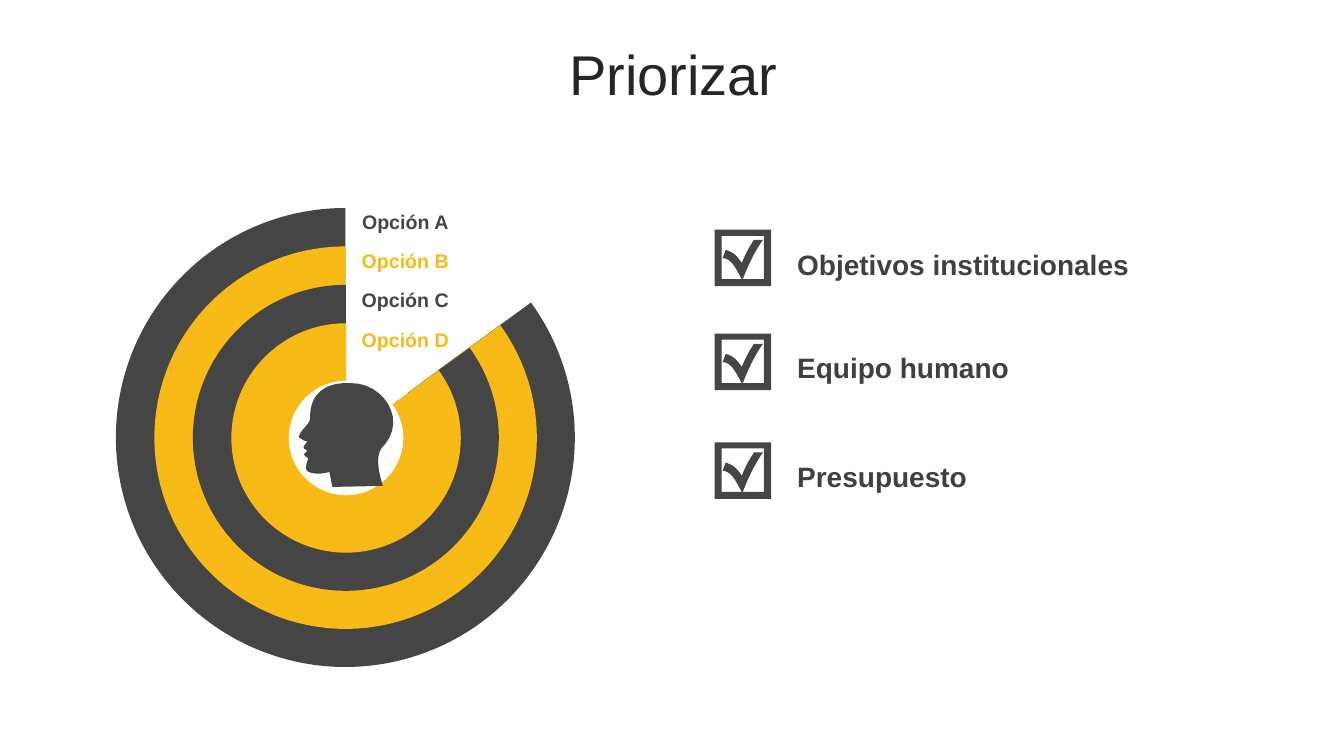
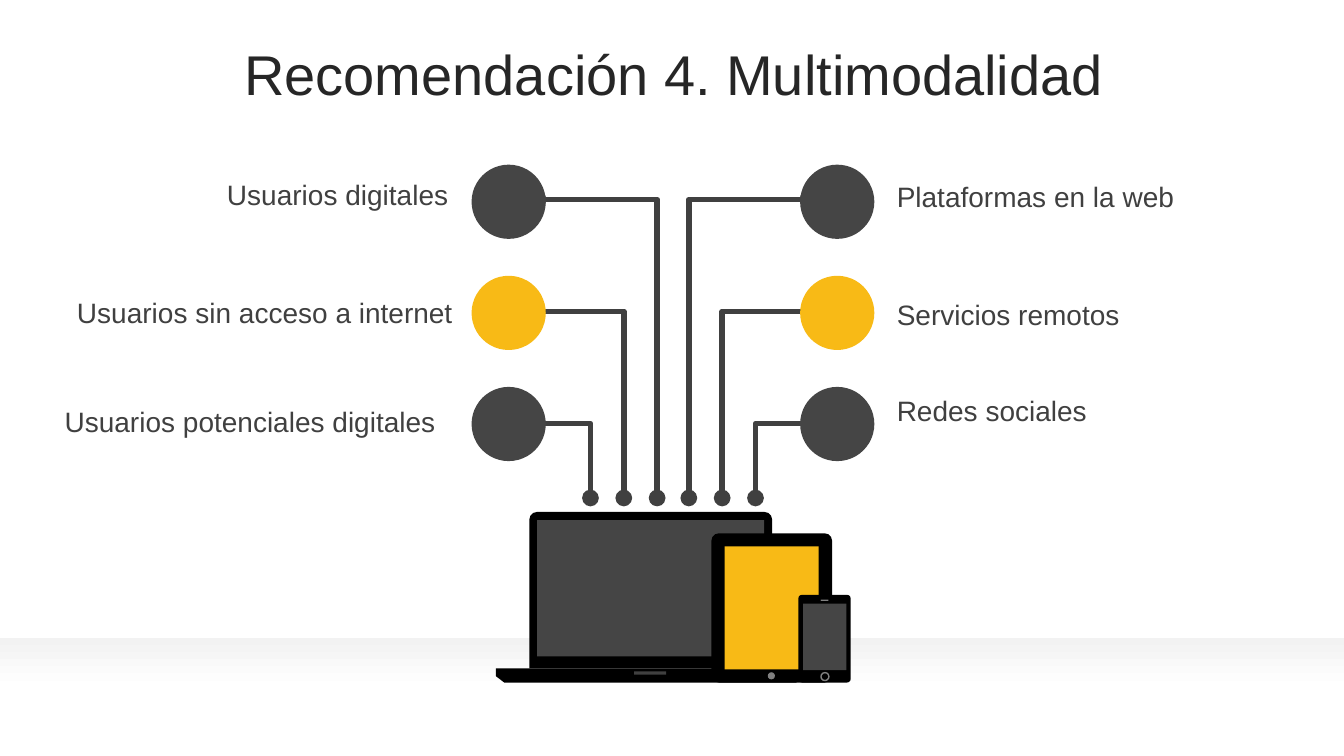
"""Builds two slides: priorities as nested rings and multimodal user channels."""
import lxml.etree
import pptx
import pptx.chart.data
import pptx.dml.color
import pptx.enum.chart
import pptx.enum.shapes
import pptx.enum.text
import pptx.oxml.ns
import pptx.util

Cm = pptx.util.Cm
Pt = pptx.util.Pt
qn = pptx.oxml.ns.qn
RGBColor = pptx.dml.color.RGBColor
Preset = pptx.enum.shapes.MSO_SHAPE
Align = pptx.enum.text.PP_ALIGN

TITLE_INK = RGBColor(0x26, 0x26, 0x26)
INK = RGBColor(0x40, 0x40, 0x40)
CHARCOAL = RGBColor(0x45, 0x45, 0x45)
AMBER = RGBColor(0xF8, 0xBA, 0x16)
BLACK = RGBColor(0, 0, 0)
GREY = RGBColor(0x80, 0x80, 0x80)
PALE = RGBColor(0xF2, 0xF2, 0xF2)
WHITE = RGBColor(0xFF, 0xFF, 0xFF)

HEAD = [[
    (52, 1), (31, 0, 18, 7, 13, 21), (9, 33, 13, 37, 8, 42),
    (4, 47, -1, 52, 0, 55), (2, 56, 4, 58, 8, 59), (7, 61, 3, 64, 5, 66),
    (8, 68), (7, 70, 5, 70, 5, 72), (6, 74, 9, 75, 9, 76),
    (7, 81, 6, 86, 8, 88), (11, 91, 21, 92, 30, 89), (33, 104), (83, 103),
    (76, 80, 77, 69, 85, 62), (107, 35, 82, 1, 52, 1),
]]
CHECKED_BOX = [
    [(7, 6), (7, 49), (27, 49), (22, 41, 18, 29, 8, 28), (11, 20),
     (20, 23, 22, 26, 27, 33), (31, 23, 34, 18, 39, 10), (48, 10),
     (40, 21, 33, 36, 28, 49), (49, 49), (49, 6)],
    [(0, 0), (56, 0), (56, 56), (0, 56)],
]


def flatten(contour, steps=12):
    points = [contour[0]]
    for part in contour[1:]:
        if len(part) == 2:
            points.append(part)
            continue
        start, controls = points[-1], (part[0:2], part[2:4], part[4:6])
        for step in range(1, steps + 1):
            t = step / steps
            weights = ((1 - t) ** 3, 3 * t * (1 - t) ** 2, 3 * t * t * (1 - t), t ** 3)
            points.append(tuple(
                sum(w * p[axis] for w, p in zip(weights, (start, *controls)))
                for axis in (0, 1)))
    return points


class Deck:
    def __init__(self):
        self.show = pptx.Presentation()
        self.show.slide_width, self.show.slide_height = Cm(33.87), Cm(19.05)
        self.slide = None

    def new_slide(self, title):
        self.slide = self.show.slides.add_slide(self.show.slide_layouts[6])
        heading = self.text(title, 0.89, 0.94, 32.16, 2.01, 40, TITLE_INK, Align.CENTER)
        heading.vertical_anchor = pptx.enum.text.MSO_ANCHOR.MIDDLE
        heading.paragraphs[0].line_spacing = 0.9
        heading.paragraphs[0].space_before = Pt(10)

    def text(self, words, left, top, width, height, size=20, color=INK,
             align=Align.LEFT, bold=False):
        box = self.slide.shapes.add_textbox(Cm(left), Cm(top), Cm(width), Cm(height))
        frame = box.text_frame
        frame.word_wrap = True
        paragraph = frame.paragraphs[0]
        paragraph.text = words
        paragraph.alignment = align
        font = paragraph.font
        font.name, font.size, font.bold = "Arial", Pt(size), bold
        font.color.rgb = color
        return frame

    def shape(self, preset, left, top, width, height, fill=None, adjust=()):
        shape = self.slide.shapes.add_shape(preset, Cm(left), Cm(top), Cm(width), Cm(height))
        for index, value in enumerate(adjust):
            shape.adjustments[index] = value
        return self.finish(shape, fill)

    def finish(self, shape, fill):
        shape.shadow.inherit = False
        shape.line.fill.background()
        if fill is None:
            shape.fill.background()
        else:
            shape.fill.solid()
            shape.fill.fore_color.rgb = fill
        return shape

    def icon(self, contours, left, top, grid=2.54):
        outlines = [[(Cm(left + x * grid / 100), Cm(top + y * grid / 100))
                     for x, y in flatten(contour)] for contour in contours]
        builder = self.slide.shapes.build_freeform(*outlines[0][0])
        builder.add_line_segments(outlines[0][1:], close=True)
        for outline in outlines[1:]:
            builder.move_to(*outline[0])
            builder.add_line_segments(outline[1:], close=True)
        self.finish(builder.convert_to_shape(), CHARCOAL)

    def ring(self, center_x, center_y, size, hole, color):
        data = pptx.chart.data.CategoryChartData()
        data.categories = ["1", "2"]
        data.add_series("Series 1", (15, 85))
        chart = self.slide.shapes.add_chart(
            pptx.enum.chart.XL_CHART_TYPE.DOUGHNUT, Cm(center_x - size / 2),
            Cm(center_y - size / 2), Cm(size), Cm(size), data).chart
        chart.has_legend = chart.has_title = False
        chart.font.name, chart.font.size = "Arial", Pt(18)
        chart.font.color.rgb = BLACK
        plot = chart.plots[0]
        plot.vary_by_categories = False
        gap, band = (plot.series[0].points[index].format for index in (0, 1))
        gap.fill.background()
        band.fill.solid()
        band.fill.fore_color.rgb = color
        for part in (gap, band):
            part.line.fill.background()

        root = chart.element
        next(root.iter(qn("c:holeSize"))).set("val", str(hole))
        area = next(root.iter(qn("c:plotArea")))
        for old in area.findall(qn("c:layout")):
            area.remove(old)
        layout = lxml.etree.Element(qn("c:layout"))
        area.insert(0, layout)
        manual = lxml.etree.SubElement(layout, qn("c:manualLayout"))
        for tag, value in (("layoutTarget", "inner"), ("xMode", "edge"), ("yMode", "edge"),
                           ("x", "0.015"), ("y", "0.011"), ("w", "0.964"), ("h", "0.974")):
            lxml.etree.SubElement(manual, qn("c:" + tag)).set("val", value)
        backdrop = lxml.etree.Element(qn("c:spPr"))
        lxml.etree.SubElement(backdrop, qn("a:noFill"))
        border = lxml.etree.SubElement(backdrop, qn("a:ln"))
        lxml.etree.SubElement(border, qn("a:noFill"))
        root.find(qn("c:chart")).addnext(backdrop)

    def cable(self, plug_x, plug_y, node_x, node_y):
        side = 1 if node_x > plug_x else -1
        middle_x, middle_y = (plug_x + node_x) / 2, (plug_y + node_y) / 2
        reach = side * (plug_y - node_y) / 2
        spread = abs(node_x - plug_x) / 2
        cable = self.slide.shapes.add_connector(
            pptx.enum.shapes.MSO_CONNECTOR.ELBOW,
            Cm(middle_x + reach), Cm(middle_y + spread),
            Cm(middle_x - reach), Cm(middle_y - spread))
        cable.line.color.rgb = INK
        cable.line.width = Pt(4)
        properties = cable.element.spPr
        properties.find(qn("a:xfrm")).set("rot", "5400000" if side > 0 else "16200000")
        geometry = properties.find(qn("a:prstGeom"))
        guides = geometry.find(qn("a:avLst"))
        if guides is None:
            guides = lxml.etree.SubElement(geometry, qn("a:avLst"))
        bend = lxml.etree.SubElement(guides, qn("a:gd"))
        bend.set("name", "adj1")
        bend.set("fmla", "val 100000")
        stroke = properties.find(qn("a:ln"))
        for end in ("a:headEnd", "a:tailEnd"):
            lxml.etree.SubElement(stroke, qn(end)).set("type", "oval")
        lxml.etree.SubElement(properties, qn("a:effectLst"))


def priorities(deck):
    deck.new_slide("Priorizar")
    options = (("Opción A", 87, CHARCOAL), ("Opción B", 84, AMBER),
               ("Opción C", 80, CHARCOAL), ("Opción D", 74, AMBER))
    for row, (option, hole, color) in enumerate(options):
        deck.ring(8.74, 11.05, 12 - 2 * row, hole, color)
    for row, (option, hole, color) in enumerate(options):
        deck.text(option, 8.74, 5.16 + row * 0.99, 2.95, 0.86, 14, color, Align.CENTER, True)
    deck.icon(HEAD, 7.54, 9.63)

    for criterion, top in (("Objetivos institucionales", 5.79), ("Equipo humano", 8.41),
                           ("Presupuesto", 11.15)):
        deck.icon(CHECKED_BOX, 18.01, top)
        frame = deck.text(criterion, 19.79, top + 0.31, 9.35, 1.12, bold=True)
        frame.margin_left = frame.margin_right = Cm(0.3)


def devices(deck):
    deck.shape(Preset.ROUND_2_SAME_RECTANGLE, 13.34, 12.9, 6.12, 3.94, BLACK, (0.05, 0))
    deck.shape(Preset.RECTANGLE, 13.54, 13.11, 5.72, 3.43, CHARCOAL)
    deck.shape(Preset.RECTANGLE, 12.5, 16.84, 7.77, 0.2, BLACK)
    deck.shape(Preset.TRAPEZOID, 12.5, 17.04, 7.77, 0.16, BLACK, (1.3,)).rotation = 180
    deck.shape(Preset.RECTANGLE, 15.98, 16.92, 0.81, 0.08, INK)

    deck.shape(Preset.ROUNDED_RECTANGLE, 17.93, 13.44, 3.04, 3.76, BLACK, (0.06,))
    deck.shape(Preset.RECTANGLE, 18.26, 13.77, 2.37, 3.1, AMBER)
    deck.shape(Preset.OVAL, 19.35, 16.94, 0.18, 0.18, GREY)

    deck.shape(Preset.ROUNDED_RECTANGLE, 20.12, 14.99, 1.32, 2.21, BLACK, (0.07,))
    deck.shape(Preset.RECTANGLE, 20.24, 15.21, 1.09, 1.68, CHARCOAL)
    deck.shape(Preset.ROUNDED_RECTANGLE, 20.68, 15.11, 0.2, 0.03, GREY, (0.5,))
    home_button = deck.shape(Preset.OVAL, 20.69, 16.95, 0.2, 0.2)
    home_button.line.color.rgb = GREY
    home_button.line.width = Pt(1)


def multimodality(deck):
    deck.new_slide("Recomendación 4. Multimodalidad")
    floor = deck.shape(Preset.RECTANGLE, 0, 16.08, 33.87, 2.97, WHITE)
    floor.fill.gradient()
    floor.fill.gradient_angle = 270
    for stop, color, position in zip(floor.fill.gradient_stops, (PALE, WHITE), (0, 0.42)):
        stop.color.rgb = color
        stop.position = position

    axis, diameter = 16.96, 1.87
    for row in range(3):
        for side in (-1, 1):
            deck.cable(axis + side * (0.4 + 0.84 * row), 12.55,
                       axis + side * (3.4 + 0.17 * row), 5.03 + 2.82 * row)
            deck.shape(Preset.OVAL, axis + side * 4.14 - diameter / 2, 4.15 + 2.8 * row,
                       diameter, diameter, AMBER if row == 1 else CHARCOAL)

    for users, right, top in (("Usuarios digitales", 11.55, 4.34),
                              ("Usuarios sin acceso a internet", 11.66, 7.32),
                              ("Usuarios potenciales digitales", 11.23, 10.06)):
        deck.text(users, right - 10.6, top, 10.6, 1.12, align=Align.RIGHT)
    for channel, top in (("Plataformas en la web", 4.39), ("Servicios remotos", 7.37),
                         ("Redes sociales", 9.78)):
        deck.text(channel, 22.35, top, 9.83, 1.12)
    devices(deck)


def main():
    deck = Deck()
    priorities(deck)
    multimodality(deck)
    deck.show.save("out.pptx")


if __name__ == "__main__":
    main()
